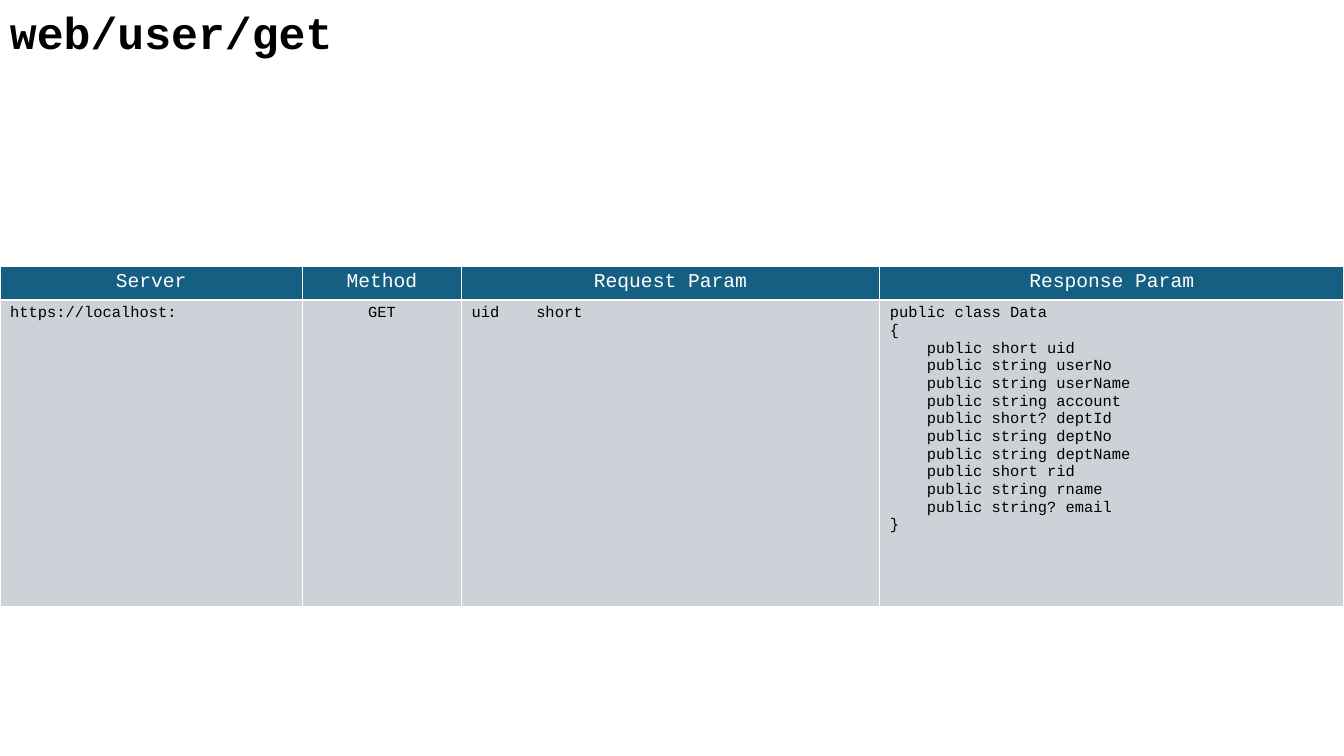
from lxml.etree import SubElement
from pptx import Presentation
from pptx.dml.color import RGBColor
from pptx.enum.text import MSO_AUTO_SIZE, PP_ALIGN
from pptx.oxml.ns import qn
from pptx.util import Cm, Pt

FONT = "Courier New"
WHITE, BLACK, HEADER_FILL, BODY_FILL = "FFFFFF", "000000", "156082", "CCD2D8"
SLIDE_WIDTH, SLIDE_HEIGHT = Cm(33.87), Cm(19.05)

COLUMNS = [
    # heading, width in cm, alignment of the value
    ("Server", 7.62, PP_ALIGN.LEFT),
    ("Method", 4.01, PP_ALIGN.CENTER),
    ("Request Param", 10.54, PP_ALIGN.LEFT),
    ("Response Param", 11.7, PP_ALIGN.LEFT),
]
RESPONSE_CLASS = """public class Data
{
    public short uid
    public string userNo
    public string userName
    public string account
    public short? deptId
    public string deptNo
    public string deptName
    public short rid
    public string rname
    public string? email
}"""
VALUES = ["https://localhost:", "GET", "uid\tshort", RESPONSE_CLASS]


def color(value):
    return RGBColor.from_string(value)


def style_paragraph(paragraph, size, font_color, bold=False):
    paragraph.font.name = FONT
    paragraph.font.size = Pt(size)
    paragraph.font.bold = bold
    paragraph.font.color.rgb = color(font_color)


def add_tab_stop(paragraph, position):
    tab_list = SubElement(paragraph._p.get_or_add_pPr(), qn("a:tabLst"))
    SubElement(tab_list, qn("a:tab"), pos=str(position), algn="l")


def add_borders(cell, border_color):
    properties = cell._tc.get_or_add_tcPr()
    for side in ("lnL", "lnR", "lnT", "lnB"):
        line = SubElement(properties, qn(f"a:{side}"), w=str(Pt(1)))
        fill = SubElement(line, qn("a:solidFill"))
        SubElement(fill, qn("a:srgbClr"), val=border_color)


def fill_cell(cell, text, size, font_color, fill_color, alignment):
    cell.text = text
    for paragraph in cell.text_frame.paragraphs:
        if "\t" in paragraph.text:
            add_tab_stop(paragraph, Cm(1.63))
        paragraph.alignment = alignment
        style_paragraph(paragraph, size, font_color)
    add_borders(cell, WHITE)
    cell.fill.solid()
    cell.fill.fore_color.rgb = color(fill_color)


def add_title(slide, left, top, width, height):
    text_frame = slide.shapes.add_textbox(left, top, width, height).text_frame
    text_frame.word_wrap = True
    text_frame.auto_size = MSO_AUTO_SIZE.SHAPE_TO_FIT_TEXT
    text_frame.text = "web/user/get"
    style_paragraph(text_frame.paragraphs[0], 32, BLACK, bold=True)


def add_endpoint_table(slide, left, top, width, height):
    table = slide.shapes.add_table(2, len(COLUMNS), left, top, width, height).table
    header_height = Cm(0.84)
    table.rows[0].height = header_height
    table.rows[1].height = height - header_height
    for index, (heading, column_width, alignment) in enumerate(COLUMNS):
        table.columns[index].width = Cm(column_width)
        fill_cell(table.cell(0, index), heading, 14, WHITE, HEADER_FILL, PP_ALIGN.CENTER)
        fill_cell(table.cell(1, index), VALUES[index], 11, BLACK, BODY_FILL, alignment)


def main():
    presentation = Presentation()
    presentation.slide_width = SLIDE_WIDTH
    presentation.slide_height = SLIDE_HEIGHT
    slide = presentation.slides.add_slide(presentation.slide_layouts[6])
    # Endpoint name
    add_title(slide, Cm(0), Cm(0), Cm(24), Cm(1.62))
    # Request and response description
    add_endpoint_table(slide, Cm(0), Cm(6.71), SLIDE_WIDTH, Cm(8.56))
    presentation.save("out.pptx")


if __name__ == "__main__":
    main()
